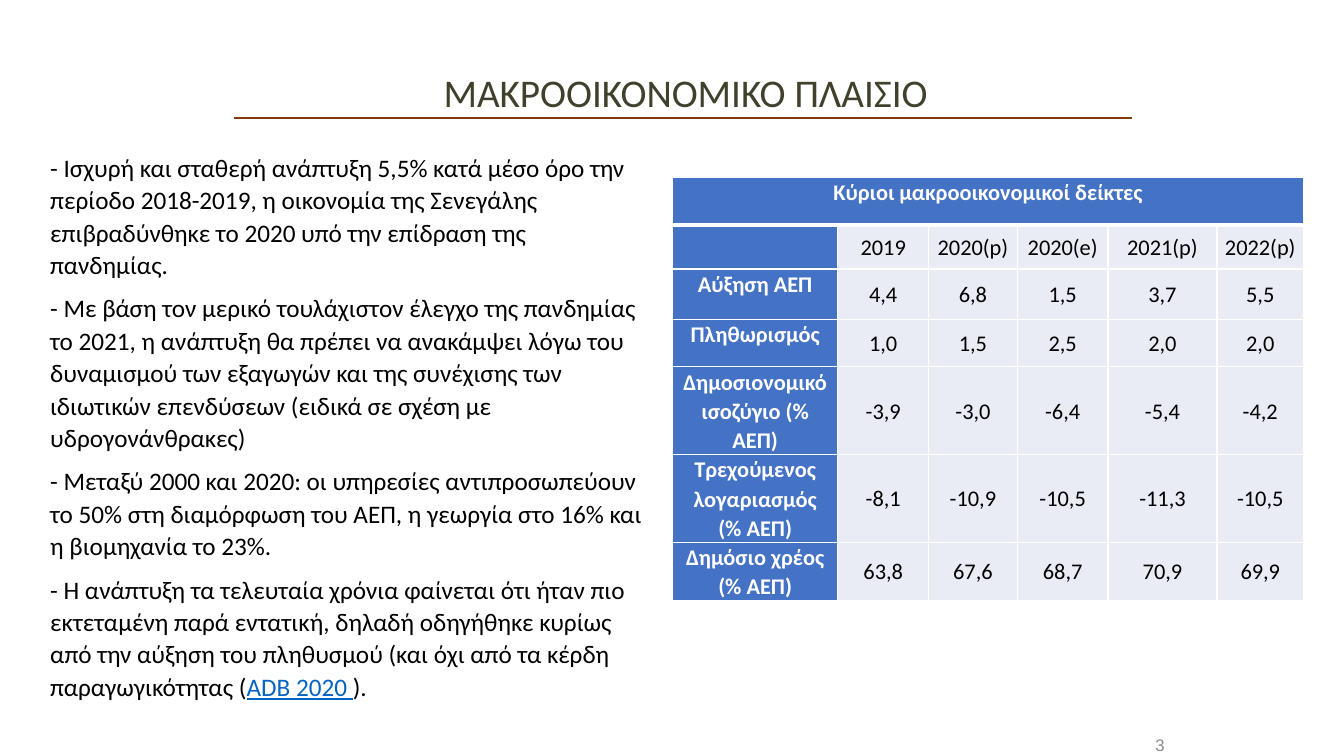
from pptx import Presentation
from pptx.dml.color import RGBColor
from pptx.enum.shapes import MSO_CONNECTOR
from pptx.enum.text import MSO_ANCHOR, PP_ALIGN
from pptx.oxml import parse_xml
from pptx.oxml.ns import nsdecls
from pptx.util import Inches, Pt
from lxml.etree import SubElement

BLACK = RGBColor(0x00, 0x00, 0x00)
WHITE = RGBColor(0xFF, 0xFF, 0xFF)
OLIVE = RGBColor(0x40, 0x40, 0x2C)
BROWN = RGBColor(0x84, 0x3C, 0x0B)
GREY = RGBColor(0x8C, 0x8C, 0x8C)
LINK_BLUE = RGBColor(0x05, 0x63, 0xC1)
HEADER_BLUE = RGBColor(0x44, 0x72, 0xC4)
PALE_BLUE = RGBColor(0xE9, 0xEB, 0xF5)


def add_run(paragraph, text, size, color, name="Calibri", **style):
    run = paragraph.add_run()
    run.text = text
    run.font.color.rgb = color
    for key, value in {"size": Pt(size), "name": name, **style}.items():
        setattr(run.font, key, value)


def add_text_frame(left, top, width, height, anchor=MSO_ANCHOR.TOP):
    box = slide.shapes.add_textbox(Inches(left), Inches(top), Inches(width), Inches(height))
    box.text_frame.word_wrap = True
    box.text_frame.vertical_anchor = anchor
    return box.text_frame


deck = Presentation()
deck.slide_width, deck.slide_height = Inches(13.33), Inches(7.5)
slide = deck.slides.add_slide(deck.slide_layouts[6])

# Page number
page_number = add_text_frame(11.22, 7.19, 0.43, 0.4, MSO_ANCHOR.MIDDLE).paragraphs[0]
page_number.alignment = PP_ALIGN.RIGHT
add_run(page_number, "3", 12, GREY, "Arial")

# Commentary
commentary = [
    [("- Iσχυρή και σταθερή ανάπτυξη 5,5% κατά μέσο όρο την περίοδο 2018-2019, "
      "η οικονομία της Σενεγάλης επιβραδύνθηκε το 2020 υπό την επίδραση της πανδημίας.", BLACK)],
    [("- Με βάση τον μερικό τουλάχιστον έλεγχο της πανδημίας το 2021, η ανάπτυξη θα πρέπει "
      "να ανακάμψει λόγω του δυναμισμού των εξαγωγών και της συνέχισης των ιδιωτικών "
      "επενδύσεων (ειδικά σε σχέση με υδρογονάνθρακες)", BLACK)],
    [("- Μεταξύ 2000 και 2020: οι υπηρεσίες αντιπροσωπεύουν το 50% στη διαμόρφωση του ΑΕΠ, "
      "η γεωργία στο 16% και η βιομηχανία το 23%.", BLACK)],
    [("- Η ανάπτυξη τα τελευταία χρόνια φαίνεται ότι ήταν πιο εκτεταμένη παρά εντατική, "
      "δηλαδή οδηγήθηκε κυρίως από την αύξηση του πληθυσμού (και όχι από τα κέρδη "
      "παραγωγικότητας (", BLACK),
     ("ADB 2020 ", LINK_BLUE),
     (").", BLACK)],
]
commentary_frame = add_text_frame(0.4, 1.44, 6.14, 5.75)
for index, pieces in enumerate(commentary):
    point = commentary_frame.paragraphs[0] if index == 0 else commentary_frame.add_paragraph()
    point.line_spacing, point.space_after = 1.07, Pt(8)
    for text, color in pieces:
        add_run(point, text, 18, color, underline=color == LINK_BLUE)

# Title and its rule
title_rule = slide.shapes.add_connector(
    MSO_CONNECTOR.STRAIGHT, Inches(2.32), Inches(1.17), Inches(11.23), Inches(1.17))
title_rule.line.color.rgb = BROWN
title_rule.line.width = Pt(1)
title_rule._element.spPr.append(parse_xml(f"<a:effectLst {nsdecls('a')}/>"))

title = add_text_frame(1.75, 0.68, 10.1, 0.47).paragraphs[0]
title.alignment, title.line_spacing = PP_ALIGN.CENTER, 0.9
add_run(title, "ΜΑΚΡΟΟΙΚΟΝΟΜΙΚΟ ΠΛΑΙΣΙΟ", 28, OLIVE)

# Indicator table
indicators = [
    ["Κύριοι μακροοικονομικοί δείκτες", "", "", "", "", ""],
    ["", "2019", "2020(p)", "2020(e)", "2021(p)", "2022(p)"],
    ["Αύξηση ΑΕΠ", "4,4", "6,8", "1,5", "3,7", "5,5"],
    ["Πληθωρισμός", "1,0", "1,5", "2,5", "2,0", "2,0"],
    ["Δημοσιονομικό ισοζύγιο (% ΑΕΠ)", "-3,9", "-3,0", "-6,4", "-5,4", "-4,2"],
    ["Τρεχούμενος λογαριασμός (% ΑΕΠ)", "-8,1", "-10,9", "-10,5", "-11,3", "-10,5"],
    ["Δημόσιο χρέος (% ΑΕΠ)", "63,8", "67,6", "68,7", "70,9", "69,9"],
]
column_widths = [1.64, 0.9, 0.88, 0.9, 1.08, 0.86]
row_heights = [0.47, 0.44, 0.5, 0.47, 0.87, 0.87, 0.58]
table = slide.shapes.add_table(
    len(row_heights), len(column_widths), Inches(6.67), Inches(1.76),
    Inches(sum(column_widths)), Inches(sum(row_heights))).table
for column, width in zip(table.columns, column_widths):
    column.width = Inches(width)
for row, height in zip(table.rows, row_heights):
    row.height = Inches(height)
table.cell(0, 0).merge(table.cell(0, 5))

for r, values in enumerate(indicators):
    for c, value in enumerate(values):
        cell = table.cell(r, c)
        is_heading = r == 0 or c == 0
        cell_format = {
            "margin_left": Inches(0.07), "margin_right": Inches(0.07),
            "margin_top": 0, "margin_bottom": 0,
            "vertical_anchor": MSO_ANCHOR.TOP if is_heading else MSO_ANCHOR.MIDDLE,
        }
        for key, setting in cell_format.items():
            setattr(cell, key, setting)

        # White borders, thicker under the heading row
        for side in "LRTB":
            thick = (r, side) in [(0, "B"), (1, "T")]
            border = parse_xml(f'<a:ln{side} {nsdecls("a")} w="{Pt(3 if thick else 1)}"/>')
            border_fill = SubElement(border, f"{{{border.nsmap['a']}}}solidFill")
            SubElement(border_fill, f"{{{border.nsmap['a']}}}srgbClr", val=str(WHITE))
            cell._tc.get_or_add_tcPr().append(border)
        cell.fill.solid()
        cell.fill.fore_color.rgb = HEADER_BLUE if is_heading else PALE_BLUE

        if value:
            entry = cell.text_frame.paragraphs[0]
            entry.alignment, entry.line_spacing, entry.space_after = PP_ALIGN.CENTER, 1.07, Pt(8)
            add_run(entry, value, 16, WHITE if is_heading else BLACK, bold=is_heading)

deck.save("out.pptx")
